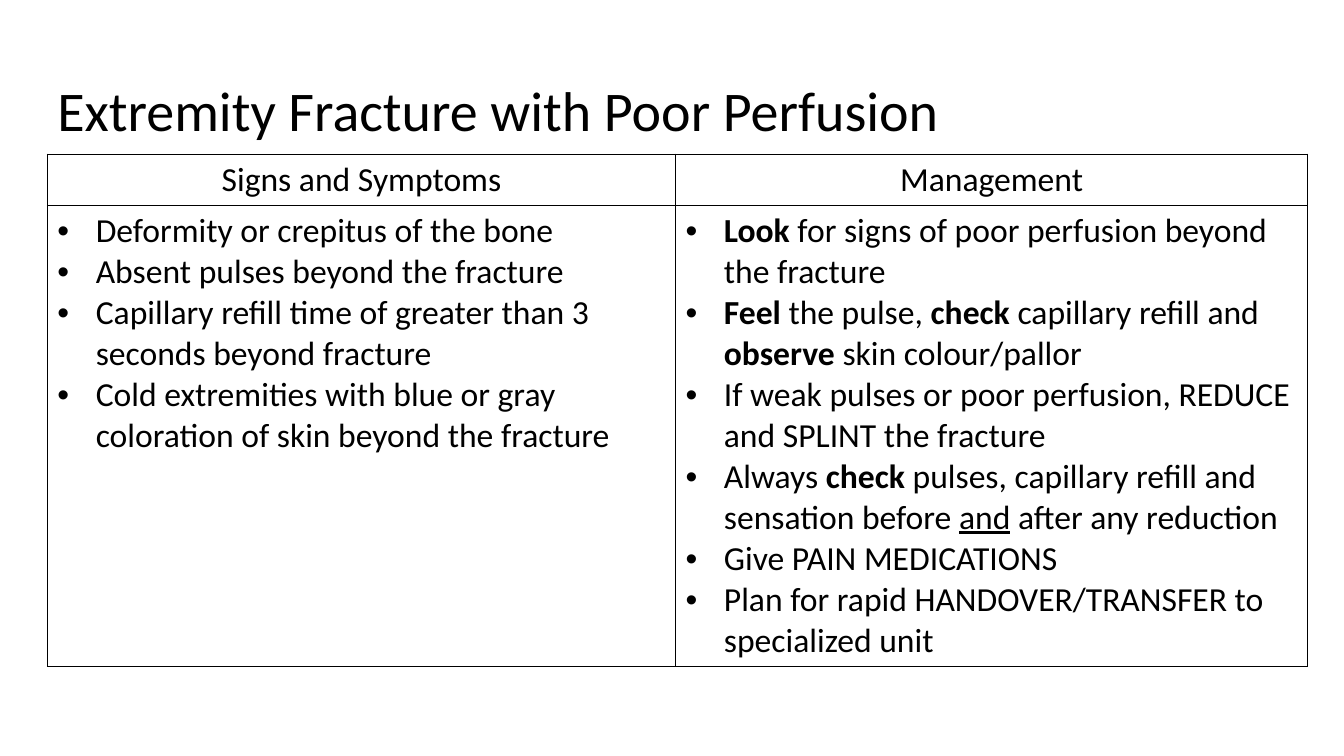
from dataclasses import dataclass

from lxml import etree
from pptx import Presentation
from pptx import util as u
from pptx.dml.color import RGBColor
from pptx.enum import text
from pptx.oxml.ns import qn

COLORS = {"text": "000000", "border": "000000", "cell": "FFFFFF"}
FONT = "Calibri"
INDENT = u.Inches(0.38)


@dataclass(frozen=True)
class Run:
    words: str
    bold: bool = False
    underline: bool = False


@dataclass(frozen=True)
class Column:
    heading: str
    width: float
    points: list[list[Run]]


COLUMNS = [
    Column("Signs and Symptoms", 6.23, [
        [Run("Deformity or crepitus of the bone")],
        [Run("Absent pulses beyond the fracture")],
        [Run("Capillary refill time of greater than 3 seconds beyond fracture")],
        [Run("Cold extremities with blue or gray coloration of skin beyond the fracture")],
    ]),
    Column("Management", 6.27, [
        [Run("Look", bold=True), Run(" for signs of poor perfusion beyond the fracture")],
        [Run("Feel", bold=True), Run(" the pulse, "), Run("check", bold=True),
         Run(" capillary refill and "), Run("observe", bold=True),
         Run(" skin colour/pallor")],
        [Run("If weak pulses or poor perfusion, REDUCE and SPLINT the fracture")],
        [Run("Always "), Run("check ", bold=True),
         Run("pulses, capillary refill and sensation before "),
         Run("and", underline=True), Run(" after any reduction")],
        [Run("Give PAIN MEDICATIONS")],
        [Run("Plan for rapid HANDOVER/TRANSFER to specialized unit")],
    ]),
]
ROW_HEIGHTS = [0.51, 4.57]


def write(tf, paragraphs: list[list[Run]], *, size: int = 24, align=text.PP_ALIGN.LEFT,
          spacing: float = 1.0, bullet: bool = False) -> None:
    """Fill a text frame with one paragraph per list of runs."""
    for i, runs in enumerate(paragraphs):
        p = tf.paragraphs[0] if i == 0 else tf.add_paragraph()
        if bullet:
            add_bullet(p)
        p.alignment = align
        p.line_spacing = spacing
        for run in runs:
            r = p.add_run()
            r.text = run.words
            r.font.name = FONT
            r.font.size = u.Pt(size)
            r.font.bold = run.bold
            r.font.underline = run.underline
            r.font.color.rgb = RGBColor.from_string(COLORS["text"])


def add_bullet(p) -> None:
    pPr = p._p.get_or_add_pPr()
    pPr.set("marL", str(INDENT))
    pPr.set("indent", str(-INDENT))
    etree.SubElement(pPr, qn("a:buFont"), typeface="Arial")
    etree.SubElement(pPr, qn("a:buChar"), char="•")


def style_cell(cell) -> None:
    """Give a cell a plain fill and a thin border on all sides."""
    cell.fill.solid()
    cell.fill.fore_color.rgb = RGBColor.from_string(COLORS["cell"])
    tcPr = cell._tc.get_or_add_tcPr()
    for i, side in enumerate("LRTB"):
        ln = etree.Element(qn(f"a:ln{side}"), w=str(u.Pt(1)))
        fill = etree.SubElement(ln, qn("a:solidFill"))
        etree.SubElement(fill, qn("a:srgbClr"), val=COLORS["border"])
        tcPr.insert(i, ln)


def add_title(s, title: str) -> None:
    sp = s.shapes.add_textbox(u.Inches(0.47), u.Inches(0.4), u.Inches(12.4), u.Inches(1.45))
    tf = sp.text_frame
    tf.word_wrap = True
    tf.vertical_anchor = text.MSO_ANCHOR.MIDDLE
    write(tf, [[Run(title)]], size=40, spacing=0.9)


def add_comparison(s, columns: list[Column]) -> None:
    width = sum(column.width for column in columns)
    table = s.shapes.add_table(
        len(ROW_HEIGHTS), len(columns), u.Inches(0.47), u.Inches(1.53),
        u.Inches(width), u.Inches(sum(ROW_HEIGHTS))).table
    for row, height in zip(table.rows, ROW_HEIGHTS):
        row.height = u.Inches(height)
    for i, column in enumerate(columns):
        table.columns[i].width = u.Inches(column.width)
        heading, body = table.cell(0, i), table.cell(1, i)
        style_cell(heading)
        style_cell(body)
        write(heading.text_frame, [[Run(column.heading)]], align=text.PP_ALIGN.CENTER)
        write(body.text_frame, column.points, bullet=True)


def main() -> None:
    prs = Presentation()
    prs.slide_width, prs.slide_height = u.Inches(13.33), u.Inches(7.5)
    s = prs.slides.add_slide(prs.slide_layouts[6])
    add_title(s, "Extremity Fracture with Poor Perfusion")
    add_comparison(s, COLUMNS)
    prs.save("out.pptx")


if __name__ == "__main__":
    main()
